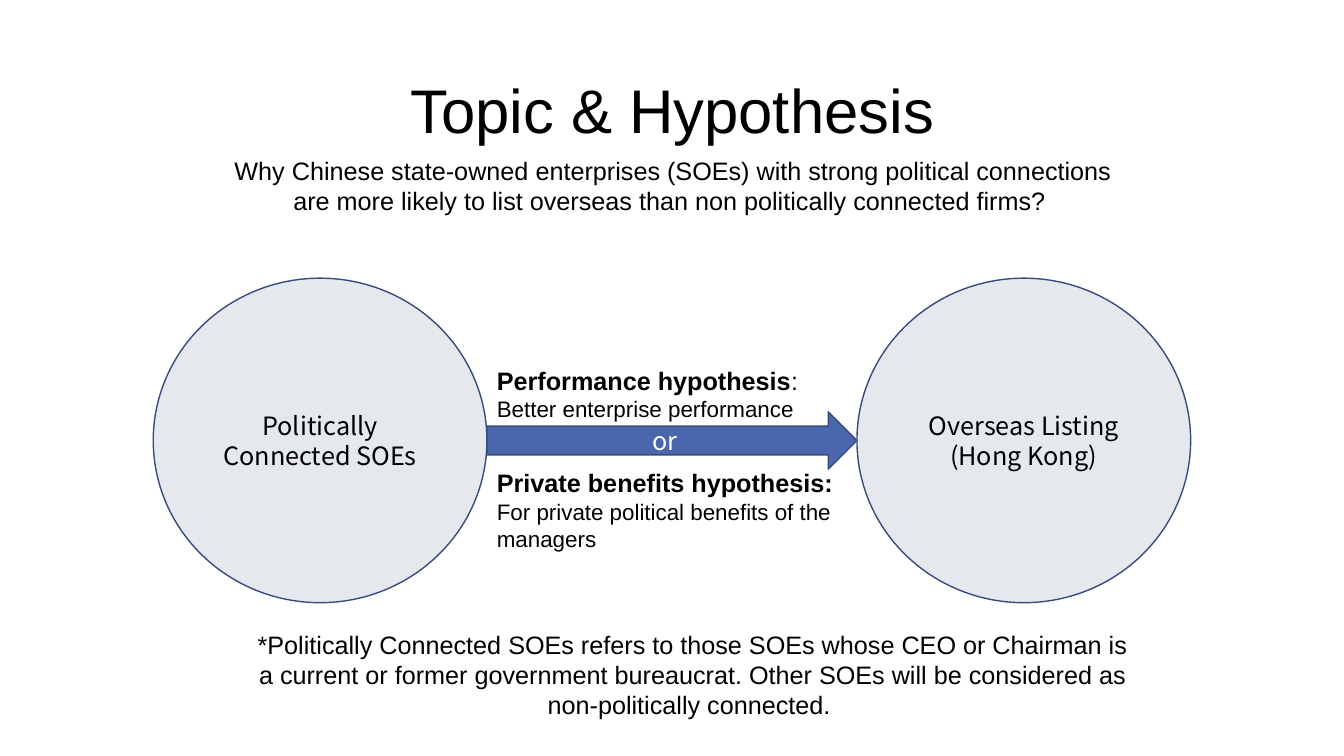
from dataclasses import dataclass

from pptx import Presentation
from pptx.dml.color import RGBColor
from pptx.enum.shapes import MSO_SHAPE
from pptx.enum.text import MSO_ANCHOR, MSO_AUTO_SIZE, PP_ALIGN
from pptx.slide import Slide
from pptx.text.text import TextFrame
from pptx.util import Emu, Inches, Pt

SLIDE_WIDTH, SLIDE_HEIGHT = Inches(13.33), Inches(7.5)
TEXT_FONT, DIAGRAM_FONT = "Arial", "Noto Sans CJK SC"
BLACK, WHITE, PALE, BLUE, NAVY = "000000", "FFFFFF", "E5E9EE", "4A66AC", "374B7F"


@dataclass(frozen=True)
class Area:
    """A rectangle in percent of the slide's width and height."""

    left: float
    top: float
    width: float
    height: float

    def box(self) -> tuple[Emu, Emu, Emu, Emu]:
        """Return left, top, width and height as lengths."""
        return (
            Emu(round(SLIDE_WIDTH * self.left / 100)),
            Emu(round(SLIDE_HEIGHT * self.top / 100)),
            Emu(round(SLIDE_WIDTH * self.width / 100)),
            Emu(round(SLIDE_HEIGHT * self.height / 100)),
        )


@dataclass(frozen=True)
class Line:
    """A paragraph with an optional bold lead before its plain text."""

    text: str = ""
    lead: str = ""
    size: int = 18


@dataclass(frozen=True)
class Node:
    """A filled shape of the diagram with its label."""

    kind: MSO_SHAPE
    area: Area
    label: str
    fill: str
    text_color: str


@dataclass(frozen=True)
class Note:
    """A text box of one or more lines."""

    area: Area
    lines: tuple[Line, ...]
    alignment: PP_ALIGN


CIRCLE_LEFT, CIRCLE_TOP, CIRCLE_WIDTH, CIRCLE_HEIGHT = 11.4, 36.8, 24.83, 42.93
GAP_LEFT, GAP_WIDTH = CIRCLE_LEFT + CIRCLE_WIDTH, 27.53
ARROW_HEIGHT = 7.6
ARROW_TOP = CIRCLE_TOP + (CIRCLE_HEIGHT - ARROW_HEIGHT) / 2

TITLE_AREA = Area(6.9, 5.33, 86.27, 19.33)

NODES = (
    Node(MSO_SHAPE.OVAL, Area(CIRCLE_LEFT, CIRCLE_TOP, CIRCLE_WIDTH, CIRCLE_HEIGHT),
         "Politically Connected SOEs", PALE, BLACK),
    Node(MSO_SHAPE.OVAL, Area(GAP_LEFT + GAP_WIDTH, CIRCLE_TOP, CIRCLE_WIDTH, CIRCLE_HEIGHT),
         "Overseas Listing (Hong Kong)", PALE, BLACK),
    Node(MSO_SHAPE.RIGHT_ARROW, Area(GAP_LEFT, ARROW_TOP, GAP_WIDTH, ARROW_HEIGHT),
         "or", BLUE, WHITE),
)

NOTES = (
    Note(Area(16.65, 19.87, 66.84, 13.47), (
        Line("Why Chinese state-owned enterprises (SOEs) with strong political connections "
             "are more likely to list overseas than non politically connected firms? "),
    ), PP_ALIGN.CENTER),
    Note(Area(GAP_LEFT, 47.6, GAP_WIDTH, 12.53), (
        Line(":", lead="Performance hypothesis"),
        Line("Better enterprise performance", size=16),
    ), PP_ALIGN.LEFT),
    Note(Area(GAP_LEFT, 61.2, GAP_WIDTH, 12.53), (
        Line(lead="Private benefits hypothesis:"),
        Line("For private political benefits of the managers", size=16),
    ), PP_ALIGN.LEFT),
    Note(Area(17.85, 82.53, 67.37, 13.47), (
        Line("*Politically Connected SOEs refers to those SOEs whose CEO or Chairman is "
             "a current or former government bureaucrat. Other SOEs will be considered as "
             "non-politically connected. "),
    ), PP_ALIGN.CENTER),
)


def color(value: str) -> RGBColor:
    """Turn a hex string into a colour."""
    return RGBColor.from_string(value)


def write(frame: TextFrame, lines: tuple[Line, ...], font_name: str, text_color: str,
          alignment: PP_ALIGN) -> None:
    """Write the lines into a text frame, one paragraph each."""
    frame.word_wrap = True
    for index, line in enumerate(lines):
        paragraph = frame.add_paragraph() if index else frame.paragraphs[0]
        paragraph.alignment = alignment
        paragraph.font.name = font_name
        paragraph.font.size = Pt(line.size)
        paragraph.font.color.rgb = color(text_color)
        for text, bold in ((line.lead, True), (line.text, False)):
            if text:
                run = paragraph.add_run()
                run.text = text
                run.font.bold = bold


def draw_title(slide: Slide, text: str) -> None:
    """Place and format the title."""
    title = slide.shapes.title
    title.left, title.top, title.width, title.height = TITLE_AREA.box()
    frame = title.text_frame
    frame.vertical_anchor = MSO_ANCHOR.MIDDLE
    write(frame, (Line(text, size=44),), TEXT_FONT, BLACK, PP_ALIGN.CENTER)
    frame.paragraphs[0].line_spacing = 0.9


def draw_node(slide: Slide, node: Node) -> None:
    """Draw one labelled shape of the diagram."""
    shape = slide.shapes.add_shape(node.kind, *node.area.box())
    shape.shadow.inherit = False
    shape.fill.solid()
    shape.fill.fore_color.rgb = color(node.fill)
    shape.line.color.rgb = color(NAVY)
    shape.line.width = Pt(1)
    shape.text_frame.vertical_anchor = MSO_ANCHOR.MIDDLE
    write(shape.text_frame, (Line(node.label),), DIAGRAM_FONT, node.text_color,
          PP_ALIGN.CENTER)


def draw_note(slide: Slide, note: Note) -> None:
    """Draw one text box."""
    frame = slide.shapes.add_textbox(*note.area.box()).text_frame
    write(frame, note.lines, TEXT_FONT, BLACK, note.alignment)
    frame.auto_size = MSO_AUTO_SIZE.SHAPE_TO_FIT_TEXT


def main() -> None:
    """Build and save the slide."""
    presentation = Presentation()
    presentation.slide_width, presentation.slide_height = SLIDE_WIDTH, SLIDE_HEIGHT
    slide = presentation.slides.add_slide(presentation.slide_layouts[5])
    draw_title(slide, "Topic & Hypothesis")
    for node in NODES:
        draw_node(slide, node)
    for note in NOTES:
        draw_note(slide, note)
    presentation.save("out.pptx")


if __name__ == "__main__":
    main()
